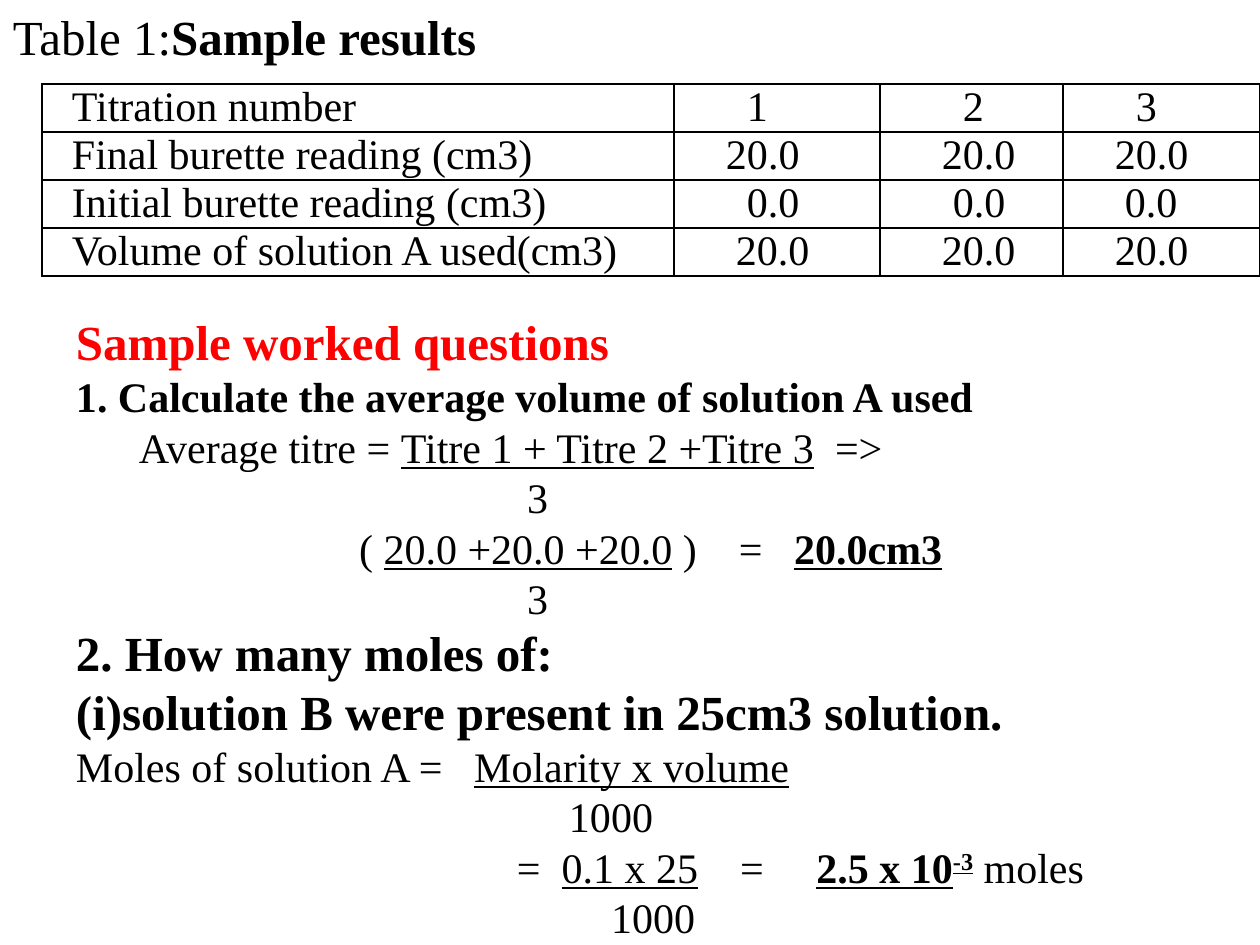
import pptx
import pptx.util
import pptx.dml.color
import pptx.enum.text
import pptx.oxml.ns
import lxml.etree

SCALE = 914400 / 126
FACE = "Times New Roman"
INK = {"text": "000000", "head": "FF0000", "line": "000000"}
BIG, MID = 28, 24
PAD = 13

GRID = {"cols": [632, 206, 183, 197], "row": 48}
# Each row: label, then readings
ROWS = [
    ["Titration number", "1", "2", "3"],
    ["Final burette reading (cm3)", "20.0", "20.0", "20.0"],
    ["Initial burette reading (cm3)", "0.0", "0.0", "0.0"],
    ["Volume of solution A used(cm3)", "20.0", "20.0", "20.0"],
]
# Left inset of each cell's text
INSETS = [[30, 73, 83, 73], [30, 52, 62, 52], [30, 73, 73, 62], [30, 62, 62, 52]]

BOLD, LINE = {"bold": True}, {"underline": True}
BOTH = {**BOLD, **LINE}


def gap(count):
    """One space, tracked out to the width of several."""
    return " ", {"track": (count - 1) * MID // 4}


# Each line: left edge, size, runs
LINES = [
    (76, BIG, [("Sample worked questions", {**BOLD, "ink": "head"})]),
    (76, MID, [("1. Calculate the average volume of solution A used", BOLD)]),
    (139, MID, [("Average titre = ", {}), ("Titre 1 + Titre 2 +Titre 3", LINE),
                gap(2), ("=>", {})]),
    (527, MID, [("3", {})]),
    (359, MID, [("( ", {}), ("20.0 +20.0 +20.0", LINE), (" )", {}), gap(4),
                ("=", {}), gap(3), ("20.0cm3", BOTH)]),
    (527, MID, [("3", {})]),
    (76, BIG, [("2. How many moles of:", BOLD)]),
    (76, BIG, [("(i)solution B were present in 25cm3 solution.", BOLD)]),
    (76, MID, [("Moles of solution A =", {}), gap(3), ("Molarity x volume", LINE)]),
    (569, MID, [("1000", {})]),
    (517, MID, [("=", {}), gap(2), ("0.1 x 25", LINE), gap(4), ("=", {}), gap(5),
                ("2.5 x 10", BOTH), ("-3", {**BOTH, "raise": 30}), (" moles", {})]),
    (611, MID, [("1000", {})]),
]


def emu(px):
    return pptx.util.Emu(round(px * SCALE))


def put(item, vals):
    for name, val in vals.items():
        setattr(item, name, val)


def node(base, tag, **attrs):
    return lxml.etree.SubElement(base, pptx.oxml.ns.qn(tag), attrs)


def place(shape, box):
    put(shape, dict(zip(("left", "top", "width", "height"), map(emu, box))))


def add_run(para, text, size, form):
    run = para.add_run()
    run.text = text
    base = {"name": FACE, "size": pptx.util.Pt(size), "bold": False}
    put(run.font, {**base, **{k: v for k, v in form.items() if k in ("bold", "underline")}})
    run.font.color.rgb = pptx.dml.color.RGBColor.from_string(INK[form.get("ink", "text")])
    for key, name, unit in (("raise", "baseline", 1000), ("track", "spc", 100)):
        if key in form:
            run.font._element.set(name, str(form[key] * unit))


def set_frame(frame, top, anchor):
    put(frame, {"word_wrap": True, "auto_size": pptx.enum.text.MSO_AUTO_SIZE.NONE,
                "vertical_anchor": anchor, "margin_left": emu(PAD),
                "margin_right": emu(PAD), "margin_top": emu(top), "margin_bottom": 0})


def add_title(slide, box):
    shape = slide.shapes.title
    place(shape, box)
    set_frame(shape.text_frame, 0, pptx.enum.text.MSO_ANCHOR.MIDDLE)
    para = shape.text_frame.paragraphs[0]
    para.alignment = pptx.enum.text.PP_ALIGN.LEFT
    add_run(para, "Table 1:", BIG, {})
    add_run(para, "Sample results", BIG, BOLD)


def add_edges(cell):
    props = cell._tc.get_or_add_tcPr()
    for side in ("L", "R", "T", "B"):
        edge = node(props, "a:ln" + side, w=str(pptx.util.Pt(1)))
        node(node(edge, "a:solidFill"), "a:srgbClr", val=INK["line"])


def add_grid(slide, box):
    shape = slide.shapes.add_table(len(ROWS), len(GRID["cols"]), *map(emu, box))
    table = shape.table
    put(table, {"first_row": False, "horz_banding": False})
    for col, width in zip(table.columns, GRID["cols"]):
        col.width = emu(width)
    for row, texts, insets in zip(table.rows, ROWS, INSETS):
        row.height = emu(GRID["row"])
        for cell, text, inset in zip(row.cells, texts, insets):
            put(cell, {"margin_left": emu(inset), "margin_right": emu(9),
                       "margin_top": 0, "margin_bottom": 0})
            add_edges(cell)
            cell.fill.background()
            add_run(cell.text_frame.paragraphs[0], text, MID, {})


def add_work(slide, box):
    shape = slide.placeholders[1]
    place(shape, box)
    frame = shape.text_frame
    set_frame(frame, 70, pptx.enum.text.MSO_ANCHOR.TOP)
    start = box[0] + PAD
    for i, (left, size, runs) in enumerate(LINES):
        para = frame.paragraphs[0] if i == 0 else frame.add_paragraph()
        put(para, {"line_spacing": 1.0, "space_before": pptx.util.Pt(0),
                   "space_after": pptx.util.Pt(0)})
        # First-line indent, no bullet
        props = para._p.get_or_add_pPr()
        props.set("marL", "0")
        props.set("indent", str(emu(left - start)))
        node(props, "a:buNone")
        for text, form in runs:
            add_run(para, text, size, form)


def main():
    deck = pptx.Presentation()
    put(deck, {"slide_width": emu(1260), "slide_height": emu(945)})
    slide = deck.slides.add_slide(deck.slide_layouts[1])
    add_title(slide, (0, 0, 506, 72))
    add_grid(slide, (42, 84, sum(GRID["cols"]), GRID["row"] * len(ROWS)))
    add_work(slide, (0, 242, 1260, 703))
    deck.save("out.pptx")


if __name__ == "__main__":
    main()
